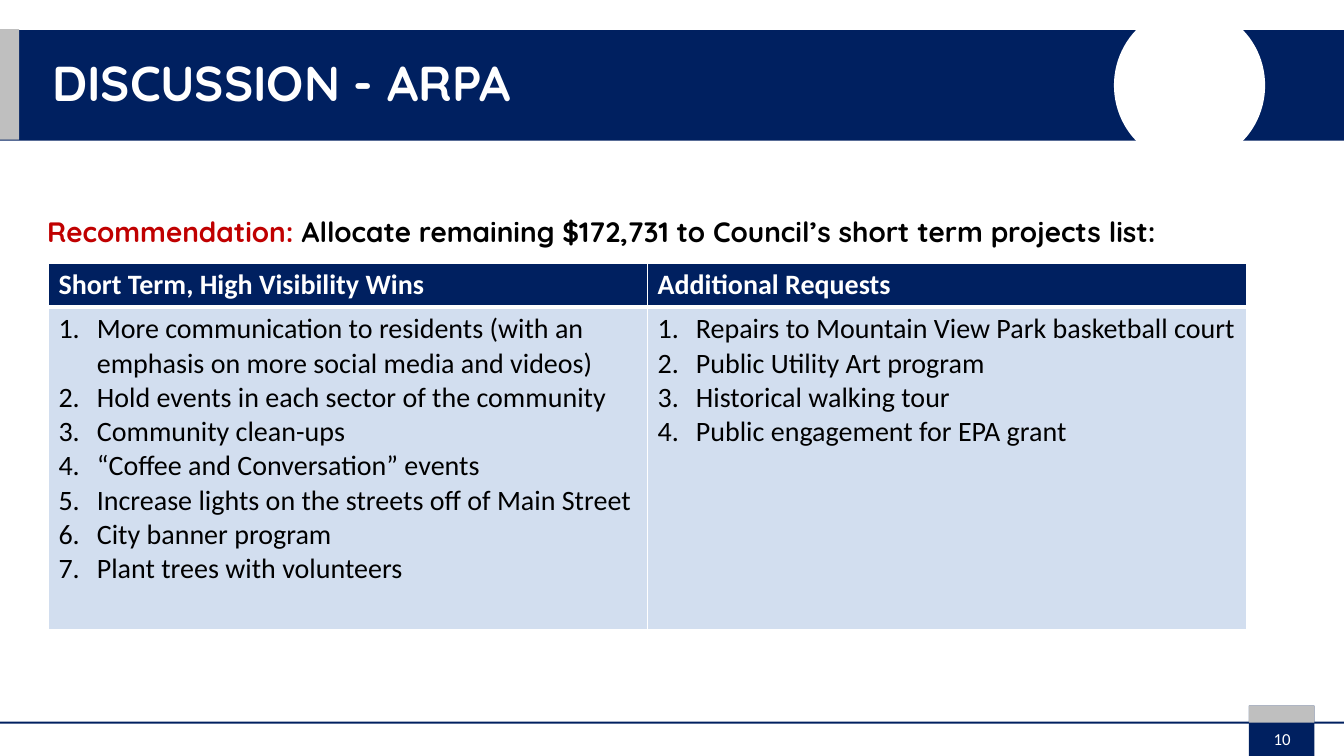
from dataclasses import dataclass
from lxml.etree import SubElement
from pptx import Presentation
from pptx.dml.color import RGBColor
from pptx.enum.shapes import MSO_SHAPE as Shape
from pptx.enum.text import MSO_ANCHOR as Anchor, PP_ALIGN as Align
from pptx.oxml.ns import qn
from pptx.util import Emu, Inches, Pt


@dataclass(frozen=True)
class Theme:
    """Colours, fonts and type sizes."""
    navy: str = "002060"
    grey: str = "BFBFBF"
    pale: str = "D2DEEF"
    red: str = "C00000"
    white: str = "FFFFFF"
    black: str = "000000"
    display: str = "Quicksand"
    body: str = "Calibri"
    title_size: int = 35
    text_size: int = 20
    number_size: int = 12


@dataclass(frozen=True)
class Box:
    """A rectangle in EMU."""
    x: int
    y: int
    w: int
    h: int

    def inner(self, x, y, w, h):
        """Return an inner box given in percent of this one."""
        return Box(Emu(round(self.x + self.w * x / 100)), Emu(round(self.y + self.h * y / 100)),
                   Emu(round(self.w * w / 100)), Emu(round(self.h * h / 100)))

    def bounds(self):
        """Return left, top, width and height."""
        return self.x, self.y, self.w, self.h


T = Theme()
PROJECTS = {
    "Short Term, High Visibility Wins": [
        "More communication to residents (with an emphasis on more social media and videos)",
        "Hold events in each sector of the community",
        "Community clean-ups",
        "“Coffee and Conversation” events",
        "Increase lights on the streets off of Main Street",
        "City banner program",
        "Plant trees with volunteers",
    ],
    "Additional Requests": [
        "Repairs to Mountain View Park basketball court",
        "Public Utility Art program",
        "Historical walking tour",
        "Public engagement for EPA grant",
    ],
}


def add_run(p, text, *, size=T.text_size, font=T.body, color=T.black, bold=False):
    """Append formatted text to a paragraph."""
    r = p.add_run()
    r.text = text
    r.font.size, r.font.name, r.font.bold = Pt(size), font, bold
    r.font.color.rgb = RGBColor.from_string(color)


def add_block(slide, box, color, kind=Shape.RECTANGLE):
    """Draw a plain filled shape."""
    sp = slide.shapes.add_shape(kind, *box.bounds())
    sp.shadow.inherit = False
    sp.fill.solid()
    sp.fill.fore_color.rgb = RGBColor.from_string(color)
    sp.line.fill.background()


def add_text_box(slide, box, anchor=Anchor.TOP):
    """Add a wrapping text box and return its first paragraph."""
    tf = slide.shapes.add_textbox(*box.bounds()).text_frame
    tf.word_wrap, tf.vertical_anchor = True, anchor
    return tf.paragraphs[0]


def number_paragraph(p):
    """Give a paragraph automatic numbering and a hanging indent."""
    pPr = p._p.get_or_add_pPr()
    pPr.set("marL", str(Inches(0.38)))
    pPr.set("indent", str(-Inches(0.38)))
    SubElement(pPr, qn("a:buFont"), typeface="+mj-lt")
    SubElement(pPr, qn("a:buAutoNum"), type="arabicPeriod")


def style_cell(cell, fill, widths):
    """Set white borders, left, right, top and bottom, and the fill."""
    tcPr = cell._tc.get_or_add_tcPr()
    for side, width in zip("LRTB", widths):
        ln = SubElement(tcPr, qn(f"a:ln{side}"), w=str(Pt(width)))
        SubElement(SubElement(ln, qn("a:solidFill")), qn("a:srgbClr"), val=T.white)
    cell.fill.solid()
    cell.fill.fore_color.rgb = RGBColor.from_string(fill)


def add_header(slide, box, title):
    """Draw the title band with its grey edge and white disc."""
    add_block(slide, box, T.navy)
    add_block(slide, box.inner(82.88, -20.9, 11.25, 141.8), T.white, Shape.OVAL)
    add_block(slide, box.inner(0, -0.9, 1.43, 100), T.grey)
    p = add_text_box(slide, box.inner(3.15, 9.1, 78.2, 82.7), Anchor.MIDDLE)
    p.line_spacing = 0.9
    add_run(p, title, size=T.title_size, font=T.display, color=T.white, bold=True)


def add_footer(slide, box, number):
    """Draw the bottom rule and the page number tag."""
    add_block(slide, box.inner(0, 32, 100, 4), T.navy)
    tag = box.inner(92.93, 0, 4.88, 100)
    add_block(slide, tag, T.navy)
    add_block(slide, tag.inner(0, 0, 100, 34), T.grey)
    p = add_text_box(slide, box.inner(92.02, 26, 6.75, 80), Anchor.MIDDLE)
    p.alignment = Align.CENTER
    add_run(p, number, size=T.number_size, color=T.white)


def add_projects(slide, box, columns):
    """Draw the table with one numbered list under each heading."""
    table = slide.shapes.add_table(2, len(columns), *box.bounds()).table
    for row, share in zip(table.rows, (12, 88)):
        row.height = box.inner(0, 0, 100, share).h
    for i, (heading, items) in enumerate(columns.items()):
        head, body = table.cell(0, i), table.cell(1, i)
        style_cell(head, T.navy, (1, 1, 1, 3))
        style_cell(body, T.pale, (1, 1, 3, 1))
        add_run(head.text_frame.paragraphs[0], heading, color=T.white, bold=True)
        tf = body.text_frame
        for j, item in enumerate(items):
            p = tf.add_paragraph() if j else tf.paragraphs[0]
            number_paragraph(p)
            add_run(p, item)


def add_recommendation(slide, box, columns):
    """Place the recommendation line above the project table."""
    p = add_text_box(slide, box.inner(0, 0, 100, 10.55))
    add_run(p, "Recommendation: ", font=T.display, color=T.red, bold=True)
    add_run(p, "Allocate remaining $172,731 to Council’s short term projects list:",
            font=T.display, bold=True)
    add_projects(slide, box.inner(0.9, 12.7, 97, 87.3), columns)


def main():
    """Build and save the slide."""
    prs = Presentation()
    prs.slide_width, prs.slide_height = Inches(13.33), Inches(7.5)
    slide = prs.slides.add_slide(prs.slide_layouts[6])
    page = Box(0, 0, prs.slide_width, prs.slide_height)
    add_header(slide, page.inner(0, 4, 100, 14.6), "DISCUSSION - ARPA")
    add_footer(slide, page.inner(0, 93.33, 100, 6.67), "10")
    add_recommendation(slide, page.inner(2.78, 27.73, 91.9, 55.6), PROJECTS)
    prs.save("out.pptx")


if __name__ == "__main__":
    main()
